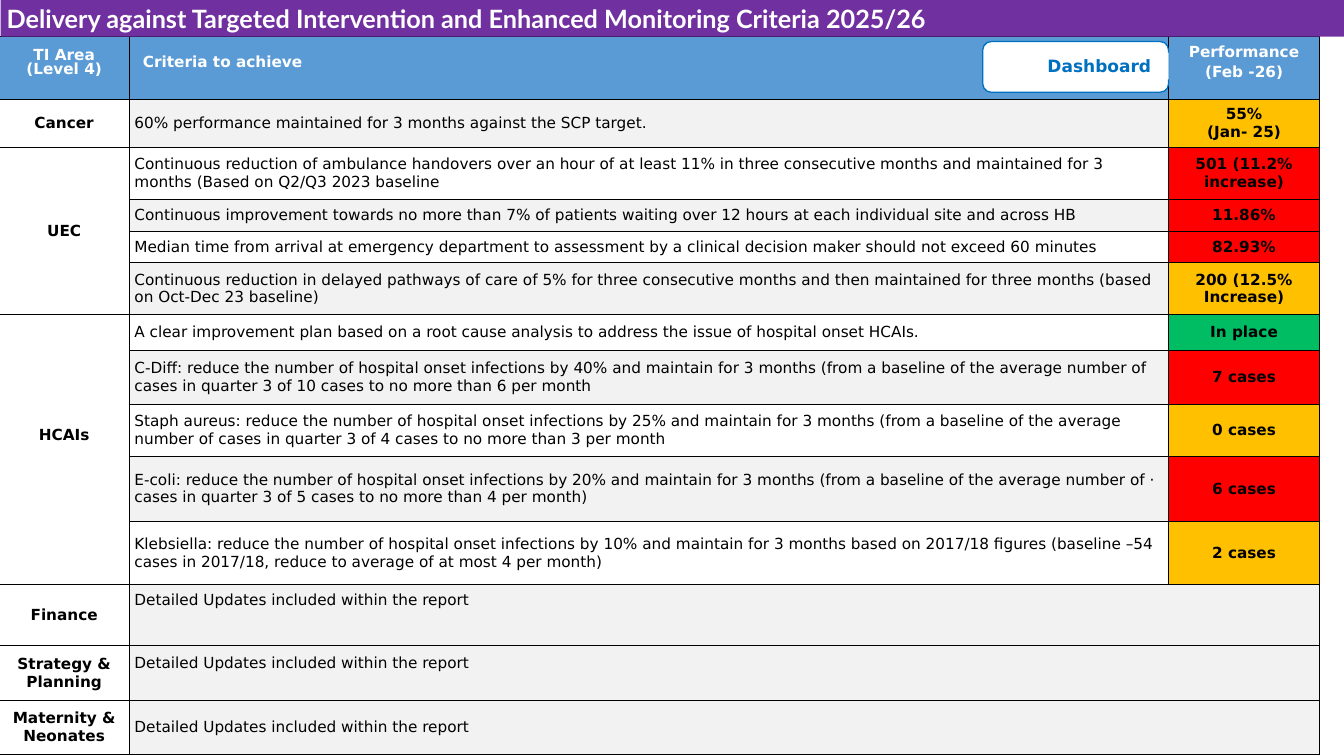
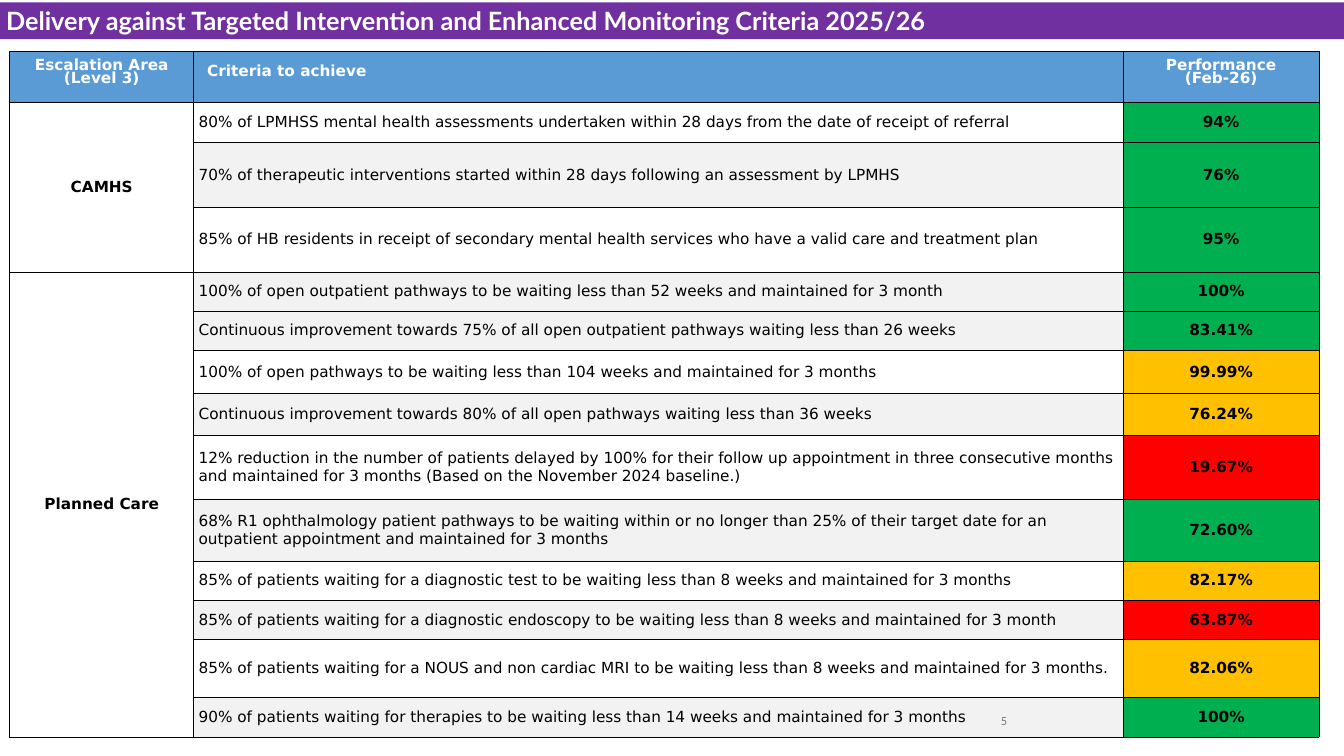
from lxml import etree
from pptx import Presentation
from pptx.dml.color import RGBColor
from pptx.enum.shapes import MSO_SHAPE
from pptx.enum.text import MSO_ANCHOR, PP_ALIGN
from pptx.oxml.ns import qn
from pptx.util import Inches, Pt

COLOURS = {
    "band": "7030A0", "header": "5B9BD5", "shade": "F2F2F2", "white": "FFFFFF",
    "black": "000000", "button": "0070C0", "page": "797979",
    "red": "FF0000", "amber": "FFC000", "green": "00B050", "in_place": "00BC62",
}
FORMATS = {
    "title": {"name": "Lato", "size": Pt(29.7), "bold": True, "colour": "white"},
    "header": {"name": "DejaVu Sans", "size": Pt(18), "bold": True, "colour": "white"},
    "strong": {"name": "DejaVu Sans", "size": Pt(18), "bold": True, "colour": "black"},
    "body": {"name": "DejaVu Sans", "size": Pt(18), "bold": False, "colour": "black"},
    "button": {"name": "DejaVu Sans", "size": Pt(20), "bold": True, "colour": "button"},
    "page": {"name": "Calibri", "size": Pt(14.8), "bold": False, "colour": "page"},
}
TITLE = "Delivery against Targeted Intervention and Enhanced Monitoring Criteria 2025/26"
SLIDE_W, SLIDE_H = 21.99, 12.37
LINE = Pt(8)
UPDATES = "Detailed Updates included within the report"

# Each group: area, then rows of height, criterion, result, status
LEVEL_4 = [
    ("Cancer", [
        (0.79, "60% performance maintained for 3 months against the SCP target.",
         "55%\n(Jan- 25)", "amber")]),
    ("UEC", [
        (0.85, "Continuous reduction of ambulance handovers over an hour of at least 11% in three "
         "consecutive months and maintained for 3 months (Based on Q2/Q3 2023 baseline",
         "501 (11.2% increase)", "red"),
        (0.52, "Continuous improvement towards no more than 7% of patients waiting over 12 hours "
         "at each individual site and across HB", "11.86%", "red"),
        (0.52, "Median time from arrival at emergency department to assessment by a clinical "
         "decision maker should not exceed 60 minutes", "82.93%", "red"),
        (0.85, "Continuous reduction in delayed pathways of care of 5% for three consecutive "
         "months and then maintained for three months (based on Oct-Dec 23 baseline)",
         "200 (12.5% Increase)", "amber")]),
    ("HCAIs", [
        (0.59, "A clear improvement plan based on a root cause analysis to address the issue of "
         "hospital onset HCAIs.", "In place", "in_place"),
        (0.87, "C-Diff: reduce the number of hospital onset infections by 40% and maintain for 3 "
         "months (from a baseline of the average number of cases in quarter 3 of 10 cases to no "
         "more than 6 per month", "7 cases", "red"),
        (0.86, "Staph aureus: reduce the number of hospital onset infections by 25% and maintain "
         "for 3 months (from a baseline of the average number of cases in quarter 3 of 4 cases to "
         "no more than 3 per month", "0 cases", "amber"),
        (1.06, "E-coli: reduce the number of hospital onset infections by 20% and maintain for 3 "
         "months (from a baseline of the average number of · cases in quarter 3 of 5 cases to no "
         "more than 4 per month)", "6 cases", "red"),
        (1.04, "Klebsiella: reduce the number of hospital onset infections by 10% and maintain "
         "for 3 months based on 2017/18 figures (baseline –54 cases in 2017/18, reduce to average "
         "of at most 4 per month)", "2 cases", "amber")]),
    ("Finance", [(0.52, UPDATES, "", None), (0.48, "", "", None)]),
    ("Strategy & Planning", [(0.89, UPDATES, "", None)]),
    ("Maternity & Neonates", [(0.89, UPDATES, "", None)]),
]
LEVEL_3 = [
    ("CAMHS", [
        (0.65, "80% of LPMHSS mental health assessments undertaken within 28 days from the date "
         "of receipt of referral", "94%", "green"),
        (1.06, "70% of therapeutic interventions started within 28 days following an assessment "
         "by LPMHS", "76%", "green"),
        (1.06, "85% of HB residents in receipt of secondary mental health services who have a "
         "valid care and treatment plan", "95%", "green")]),
    ("Planned Care", [
        (0.64, "100% of open outpatient pathways to be waiting less than 52 weeks and maintained "
         "for 3 month", "100%", "green"),
        (0.64, "Continuous improvement towards 75% of all open outpatient pathways waiting less "
         "than 26 weeks", "83.41%", "green"),
        (0.71, "100% of open pathways to be waiting less than 104 weeks and maintained for 3 "
         "months", "99.99%", "amber"),
        (0.68, "Continuous improvement towards 80% of all open pathways waiting less than 36 "
         "weeks", "76.24%", "amber"),
        (1.06, "12% reduction in the number of patients delayed by 100% for their follow up "
         "appointment in three consecutive months and maintained for 3 months (Based on the "
         "November 2024 baseline.)", "19.67%", "red"),
        (1.0, "68% R1 ophthalmology patient pathways to be waiting within or no longer than 25% "
         "of their target date for an outpatient appointment and maintained for 3 months",
         "72.60%", "green"),
        (0.64, "85% of patients waiting for a diagnostic test to be waiting less than 8 weeks and "
         "maintained for 3 months", "82.17%", "amber"),
        (0.65, "85% of patients waiting for a diagnostic endoscopy to be waiting less than 8 "
         "weeks and maintained for 3 month", "63.87%", "red"),
        (0.94, "85% of patients waiting for a NOUS and non cardiac MRI to be waiting less than 8 "
         "weeks and maintained for 3 months.", "82.06%", "amber"),
        (0.65, "90% of patients waiting for therapies to be waiting less than 14 weeks and "
         "maintained for 3 months", "100%", "green")]),
]


def rgb(name):
    return RGBColor.from_string(COLOURS[name])


def write(frame, text, style, align=PP_ALIGN.LEFT):
    """Write one paragraph per line of text."""
    frame.text = text
    frame.word_wrap = True
    for paragraph in frame.paragraphs:
        paragraph.alignment = align
        for run in paragraph.runs:
            for key, value in FORMATS[style].items():
                if key == "colour":
                    run.font.color.rgb = rgb(value)
                else:
                    setattr(run.font, key, value)


def add_panel(slide, box, fill, preset=MSO_SHAPE.RECTANGLE, outline=None):
    panel = slide.shapes.add_shape(preset, *map(Inches, box))
    panel.shadow.inherit = False
    panel.fill.solid()
    panel.fill.fore_color.rgb = rgb(fill)
    if outline:
        panel.line.color.rgb = rgb(outline)
        panel.line.width = Pt(1.5)
    else:
        panel.line.fill.background()
    panel.text_frame.vertical_anchor = MSO_ANCHOR.TOP
    return panel


def add_title_band(slide, left, top):
    band = add_panel(slide, (left, top, SLIDE_W, 0.6), "band")
    write(band.text_frame, TITLE, "title", PP_ALIGN.JUSTIFY)


def add_dashboard_button(slide, left, top, width, height):
    add_panel(slide, (left, top, width, height), "white", MSO_SHAPE.ROUNDED_RECTANGLE, "button")
    label = add_panel(slide, (left + 0.96, top + 0.18, width - 0.96, 0.44), "white")
    write(label.text_frame, "Dashboard", "button")


def add_page_number(slide, number, box):
    frame = slide.shapes.add_textbox(*map(Inches, box)).text_frame
    write(frame, number, "page", PP_ALIGN.RIGHT)
    frame.vertical_anchor = MSO_ANCHOR.MIDDLE
    frame.margin_left = frame.margin_right = Inches(0.16)


def format_cell(cell, fill, margin_x, margin_y, open_side=None):
    """Set anchor, margins, borders and fill; open_side has no border."""
    cell_format = {
        "vertical_anchor": MSO_ANCHOR.MIDDLE,
        "margin_left": Inches(margin_x), "margin_right": Inches(margin_x),
        "margin_top": Inches(margin_y), "margin_bottom": Inches(margin_y),
    }
    for key, value in cell_format.items():
        setattr(cell, key, value)
    properties = cell._tc.get_or_add_tcPr()
    for side in ("a:lnL", "a:lnR", "a:lnT", "a:lnB"):
        border = etree.SubElement(properties, qn(side), w=str(Pt(1)))
        if side == open_side:
            etree.SubElement(border, qn("a:noFill"))
        else:
            solid = etree.SubElement(border, qn("a:solidFill"))
            etree.SubElement(solid, qn("a:srgbClr"), val=COLOURS["black"])
    if fill:
        cell.fill.solid()
        cell.fill.fore_color.rgb = rgb(fill)
    else:
        cell.fill.background()


def add_criteria_table(slide, left, top, widths, header_height, headings, groups, shaded, lifts):
    """headings: text and gap between lines; lifts: bottom margin by cell."""
    rows = [row for _, members in groups for row in members]
    heights = [header_height] + [row[0] for row in rows]
    table = slide.shapes.add_table(len(heights), len(widths), Inches(left), Inches(top),
                                   Inches(sum(widths)), Inches(sum(heights))).table
    table.first_row = table.horz_banding = False
    for column, width in zip(table.columns, widths):
        column.width = Inches(width)
    for table_row, height in zip(table.rows, heights):
        table_row.height = Inches(height)

    # Header row
    for col, (heading, gap) in enumerate(headings):
        cell = table.cell(0, col)
        format_cell(cell, "header", 0.22, 0.11)
        write(cell.text_frame, heading, "header", PP_ALIGN.LEFT if col == 1 else PP_ALIGN.CENTER)
        for index, paragraph in enumerate(cell.text_frame.paragraphs):
            paragraph.line_spacing = LINE
            if index:
                paragraph.space_before = gap

    # Criteria and results, one group per area
    start = 1
    for area, members in groups:
        end = start + len(members) - 1
        for row, (_, criterion, result, status) in enumerate(members, start):
            shade = "shade" if row in shaded else None
            open_side = None
            if not result and end > start:
                open_side = "a:lnB" if row == start else "a:lnT"
            format_cell(table.cell(row, 0), None, 0.08, 0.08)
            format_cell(table.cell(row, 1), shade, 0.08, 0.08, open_side)
            format_cell(table.cell(row, 2), status or shade, 0.08, 0.08, open_side)
            if criterion:
                write(table.cell(row, 1).text_frame, criterion, "body")
            if result:
                write(table.cell(row, 2).text_frame, result, "strong", PP_ALIGN.CENTER)
            else:
                table.cell(row, 1).merge(table.cell(row, 2))
        write(table.cell(start, 0).text_frame, area, "strong", PP_ALIGN.CENTER)
        if end > start:
            table.cell(start, 0).merge(table.cell(end, 0))
        start = end + 1

    for (row, col), margin in lifts.items():
        table.cell(row, col).margin_bottom = Inches(margin)


def build_level_4(slide):
    headings = [("TI Area\n(Level 4)", LINE), ("Criteria to achieve", 0),
                ("Performance\n(Feb -26)", 2 * LINE)]
    add_criteria_table(slide, -0.02, 0.6, (2.14, 17, 2.47), 1.02, headings, LEVEL_4,
                       {*range(1, 12, 2), 12, 13, 14}, {(6, 0): 0.56, (13, 1): 0.41})
    add_title_band(slide, 0.01, 0)
    add_dashboard_button(slide, 16.08, 0.68, 3.04, 0.83)


def build_level_3(slide):
    headings = [("Escalation Area\n(Level 3)", LINE), ("Criteria to achieve", 0),
                ("Performance\n(Feb-26)", LINE)]
    add_criteria_table(slide, 0.16, 0.84, (3.01, 15.21, 3.2), 0.84, headings, LEVEL_3,
                       {2, 4, *range(5, 14, 2)}, {})
    add_page_number(slide, "5", (12.62, 11.46, 4.02, 0.66))
    add_title_band(slide, 0, 0.04)


def main():
    deck = Presentation()
    deck.slide_width, deck.slide_height = Inches(SLIDE_W), Inches(SLIDE_H)
    for build in (build_level_4, build_level_3):
        build(deck.slides.add_slide(deck.slide_layouts[6]))
    deck.save("out.pptx")


if __name__ == "__main__":
    main()
